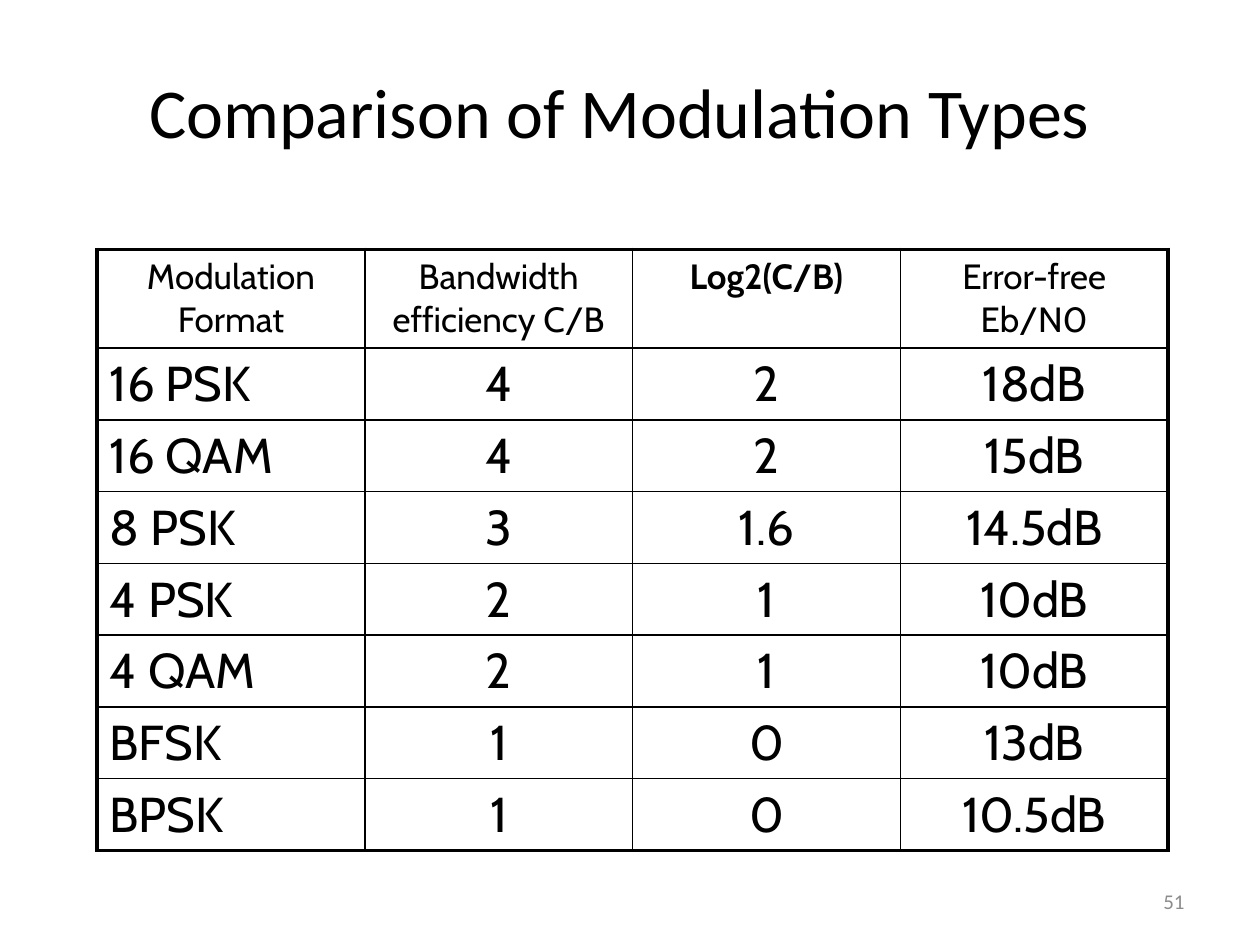
from dataclasses import dataclass

from lxml.etree import SubElement
from pptx import Presentation
from pptx.dml.color import RGBColor
from pptx.enum.text import MSO_ANCHOR, PP_ALIGN
from pptx.oxml.ns import qn
from pptx.util import Pt


@dataclass(frozen=True)
class Theme:
    """Hold the colours, fonts, type sizes and line widths."""
    ink: str = "000000"
    muted: str = "8C8C8C"
    text_font: str = "Calibri"
    table_font: str = "Cabin"
    title_size: float = 40
    header_size: float = 20
    body_size: float = 28
    number_size: float = 12
    outer_line: float = 2.25
    inner_line: float = 1


THEME = Theme()
HEADERS = ["Modulation Format", "Bandwidth efficiency C/B", "Log2(C/B)", "Error-free Eb/N0"]
BOLD_HEADER = "Log2(C/B)"
MODULATIONS = [
    ["16 PSK", "4", "2", "18dB"],
    ["16 QAM", "4", "2", "15dB"],
    ["8 PSK", "3", "1.6", "14.5dB"],
    ["4 PSK", "2", "1", "10dB"],
    ["4 QAM", "2", "1", "10dB"],
    ["BFSK", "1", "0", "13dB"],
    ["BPSK", "1", "0", "10.5dB"],
]
COLUMN_WIDTH, HEADER_HEIGHT, ROW_HEIGHT = 153, 56.5, 41


def write_text(text_frame, text, alignment, color=THEME.ink, **font_format):
    """Write one formatted paragraph into a text frame."""
    paragraph = text_frame.paragraphs[0]
    paragraph.alignment = alignment
    run = paragraph.add_run()
    run.text = text
    for name, value in font_format.items():
        setattr(run.font, name, value)
    run.font.color.rgb = RGBColor.from_string(color)


def add_label(slide, box, text, alignment, **text_format):
    """Add a wrapping, vertically centred text box."""
    shape = slide.shapes.add_textbox(*map(Pt, box))
    frame_format = {"word_wrap": True, "vertical_anchor": MSO_ANCHOR.MIDDLE}
    for name, value in frame_format.items():
        setattr(shape.text_frame, name, value)
    write_text(shape.text_frame, text, alignment, name=THEME.text_font, **text_format)


def set_borders(cell, outer_sides):
    """Draw the four cell borders, heavier on the table's outer sides."""
    properties = cell._tc.get_or_add_tcPr()
    for side, is_outer in outer_sides.items():
        width = THEME.outer_line if is_outer else THEME.inner_line
        line = SubElement(properties, qn(f"a:ln{side}"), w=str(Pt(width)))
        fill = SubElement(line, qn("a:solidFill"))
        SubElement(fill, qn("a:srgbClr"), val=THEME.ink)


def add_comparison_table(slide, left, top):
    """Add the table of modulation types."""
    rows = [HEADERS, *MODULATIONS]
    heights = [HEADER_HEIGHT] + [ROW_HEIGHT] * len(MODULATIONS)
    last_row, last_column = len(rows) - 1, len(HEADERS) - 1
    size = (COLUMN_WIDTH * len(HEADERS), sum(heights))
    table = slide.shapes.add_table(
        len(rows), len(HEADERS), *map(Pt, (left, top, *size))
    ).table
    for name, value in {"first_row": False, "horz_banding": False}.items():
        setattr(table, name, value)
    for column in table.columns:
        column.width = Pt(COLUMN_WIDTH)
    for row_index, (values, height) in enumerate(zip(rows, heights)):
        table.rows[row_index].height = Pt(height)
        is_header = row_index == 0
        for column_index, text in enumerate(values):
            cell = table.cell(row_index, column_index)
            is_name = column_index == 0 and not is_header
            write_text(
                cell.text_frame, text, PP_ALIGN.LEFT if is_name else PP_ALIGN.CENTER,
                name=THEME.table_font, bold=text == BOLD_HEADER,
                size=Pt(THEME.header_size if is_header else THEME.body_size),
            )
            set_borders(cell, {
                "L": column_index == 0, "R": column_index == last_column,
                "T": is_header, "B": row_index == last_row,
            })
            cell.fill.background()


def main():
    """Build and save the slide."""
    presentation = Presentation()
    for name, value in {"slide_width": Pt(720), "slide_height": Pt(540)}.items():
        setattr(presentation, name, value)
    slide = presentation.slides.add_slide(presentation.slide_layouts[6])
    add_label(slide, (48, 18, 612, 90), "Comparison of Modulation Types",
              PP_ALIGN.CENTER, size=Pt(THEME.title_size))
    add_comparison_table(slide, 55.5, 142.5)
    add_label(slide, (516, 500.5, 168, 28.75), "51", PP_ALIGN.RIGHT,
              color=THEME.muted, size=Pt(THEME.number_size))
    presentation.save("out.pptx")


if __name__ == "__main__":
    main()
